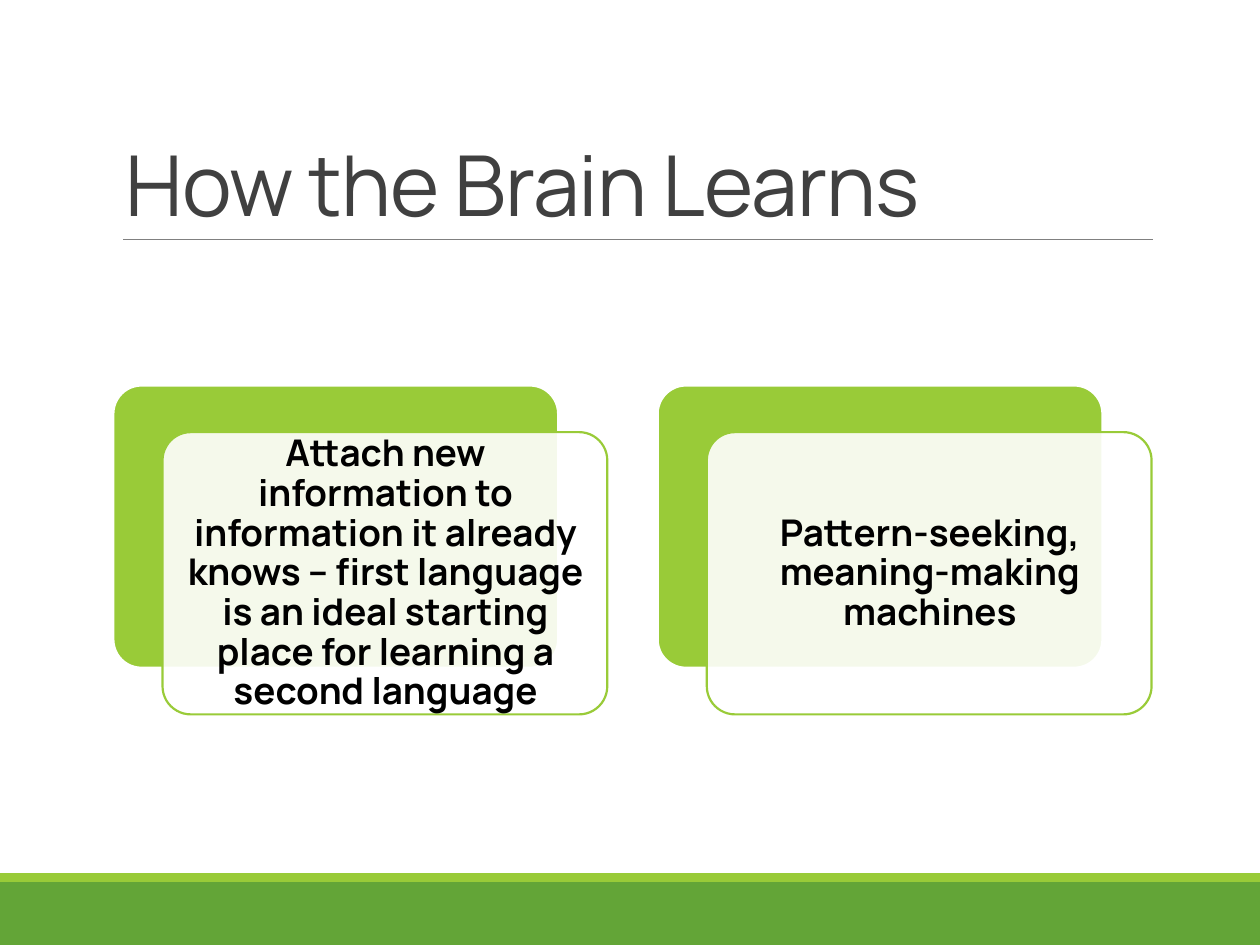
from lxml import etree
from pptx import Presentation
from pptx.dml.color import RGBColor
from pptx.enum import shapes, text
from pptx.oxml import ns
from pptx.util import Inches, Pt

COLORS = {"green": "63A537", "lime": "99CB38", "white": "FFFFFF",
          "rule": "808080", "title": "404040", "black": "000000"}
COLORS = {name: RGBColor.from_string(value) for name, value in COLORS.items()}


def add_block(kind, box, fill, line=None):
    block = slide.shapes.add_shape(kind, *map(Inches, box))
    block.shadow.inherit = False
    block.fill.solid()
    block.fill.fore_color.rgb = COLORS[fill]
    if line:
        block.adjustments[0] = 0.1
        block.line.color.rgb = COLORS[line]
        block.line.width = Pt(1.25)
    else:
        block.line.fill.background()
    return block


def add_words(box, words, frame_format, paragraph_format, font_format, color):
    frame = slide.shapes.add_textbox(*map(Inches, box)).text_frame
    paragraph = frame.paragraphs[0]
    run = paragraph.add_run()
    run.text = words
    for target, values in ((frame, frame_format), (paragraph, paragraph_format),
                           (run.font, font_format)):
        for name, value in values.items():
            setattr(target, name, value)
    run.font.color.rgb = COLORS[color]
    return run


prs = Presentation()
prs.slide_width, prs.slide_height = Inches(10), Inches(7.5)
slide = prs.slides.add_slide(prs.slide_layouts[6])

# Footer bands and title rule
add_block(shapes.MSO_SHAPE.RECTANGLE, (0, 7, 10, 0.5), "green")
add_block(shapes.MSO_SHAPE.RECTANGLE, (0, 6.93, 10, 0.07), "lime")
title_rule = slide.shapes.add_connector(
    shapes.MSO_CONNECTOR.STRAIGHT, Inches(0.98), Inches(1.9), Inches(9.15), Inches(1.9))
title_rule.line.color.rgb = COLORS["rule"]
title_rule.line.width = Pt(0.5)
etree.SubElement(title_rule._element.spPr, ns.qn("a:effectLst"))

title = add_words(
    (0.9, 0.31, 8.25, 1.59), "How the Brain Learns",
    {"word_wrap": True, "vertical_anchor": text.MSO_ANCHOR.BOTTOM},
    {"line_spacing": 0.85},
    {"name": "Manrope", "size": Pt(48)}, "title")
title._r.get_or_add_rPr().set("spc", "-50")

# Idea cards: a lime back panel with an offset translucent front panel
inset = Inches(0.09)
idea_frame = {"word_wrap": True, "vertical_anchor": text.MSO_ANCHOR.MIDDLE,
              "margin_left": inset, "margin_right": inset,
              "margin_top": inset, "margin_bottom": inset}
idea_paragraph = {"alignment": text.PP_ALIGN.CENTER, "line_spacing": 0.9}
idea_font = {"name": "Manrope", "size": Pt(21), "bold": True}
ideas = ["Attach new information to information it already knows – first language "
         "is an ideal starting place for learning a second language",
         "Pattern-seeking, meaning-making machines"]

for column, idea in enumerate(ideas):
    left = 0.9 + column * 4.32
    add_block(shapes.MSO_SHAPE.ROUNDED_RECTANGLE, (left, 3.06, 3.53, 2.24), "lime", "white")
    front = add_block(shapes.MSO_SHAPE.ROUNDED_RECTANGLE,
                      (left + 0.39, 3.43, 3.53, 2.24), "white", "lime")
    fill_color = front._element.spPr.find(ns.qn("a:solidFill"))[0]
    etree.SubElement(fill_color, ns.qn("a:alpha"), val="90000")
    add_words((left + 0.46, 3.5, 3.4, 2.11), idea,
              idea_frame, idea_paragraph, idea_font, "black")

prs.save("out.pptx")
